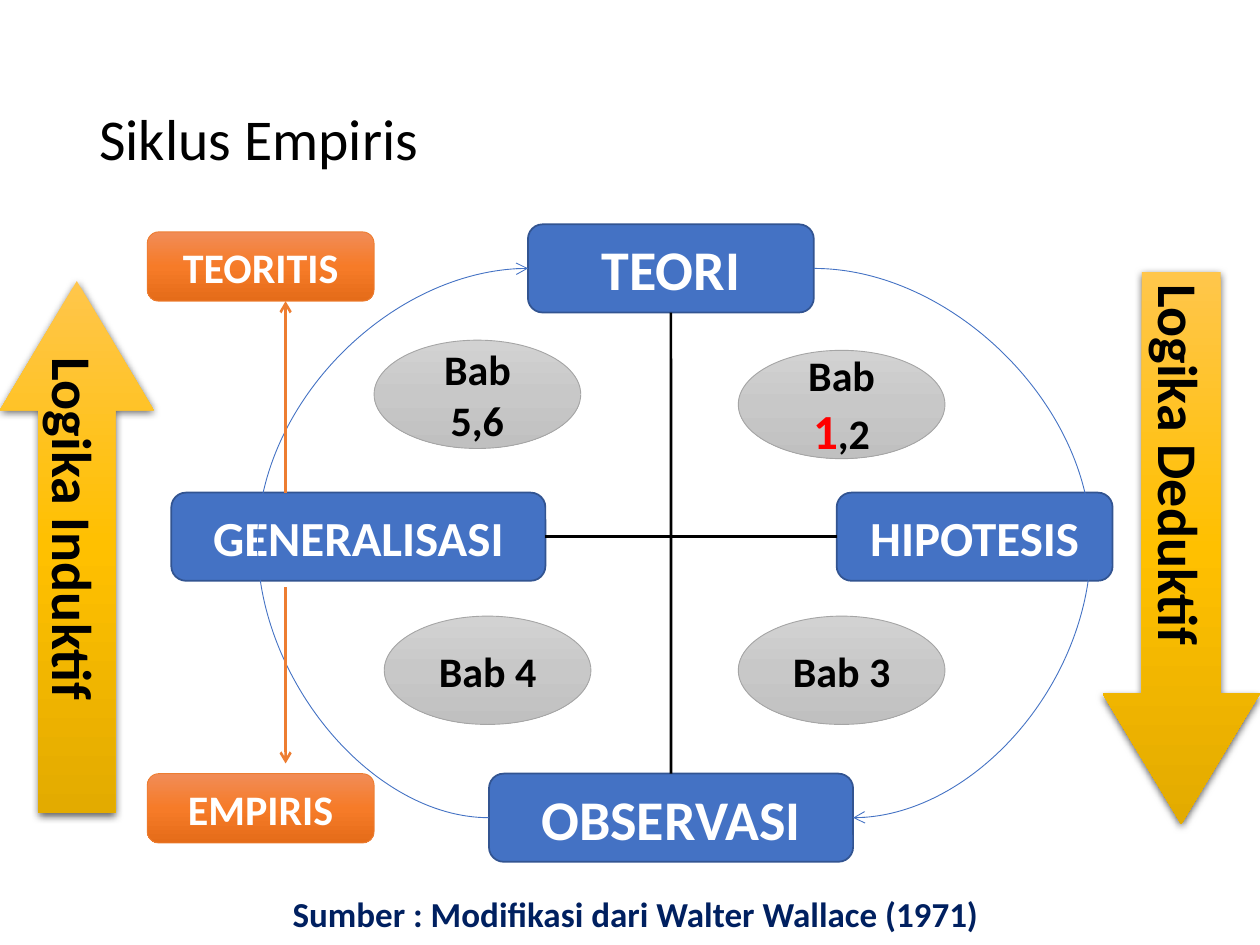
from copy import deepcopy

from lxml import etree
from pptx import Presentation
from pptx.dml.color import RGBColor
from pptx.enum.shapes import MSO_CONNECTOR as Connector, MSO_SHAPE as Shape
from pptx.enum.text import MSO_ANCHOR as Anchor, PP_ALIGN as Align
from pptx.oxml.ns import qn
from pptx.util import Pt

COLORS = {
    "black": "000000", "white": "FFFFFF", "red": "FF0000", "navy": "002060",
    "blue": "4472C4", "blue_edge": "325491", "orange": "ED7D31", "gray": "A5A5A5",
}
GRADIENTS = {
    "orange": ("F18C57", "F67B28", "E56C19"),
    "gold": ("FFC64B", "FFC000", "E3AB00"),
    "gray": ("D2D2D2", "C8C8C8", "C0C0C0"),
}


def rgb(name):
    return RGBColor.from_string(COLORS[name])


class SlideBuilder:
    font_name = "Calibri"

    def __init__(self, slide):
        self.slide = slide

    def add_runs(self, frame, runs, align=Align.CENTER, anchor=Anchor.MIDDLE, bold=True):
        """Fill the first paragraph; each run is (text, size, color)."""
        frame.word_wrap = True
        frame.vertical_anchor = anchor
        paragraph = frame.paragraphs[0]
        paragraph.alignment = align
        for text, size, color in runs:
            run = paragraph.add_run()
            run.text = text
            run.font.name = self.font_name
            run.font.size = Pt(size)
            run.font.bold = bold
            run.font.color.rgb = rgb(color)
        return paragraph

    def title(self, text, left, top, width, height):
        title = self.slide.shapes.title
        title.left, title.top = Pt(left), Pt(top)
        title.width, title.height = Pt(width), Pt(height)
        paragraph = self.add_runs(title.text_frame, [(text, 33, "black")], Align.LEFT, bold=False)
        paragraph.line_spacing = 0.9

    def text(self, runs, left, top, width, height):
        box = self.slide.shapes.add_textbox(Pt(left), Pt(top), Pt(width), Pt(height))
        self.add_runs(box.text_frame, runs, anchor=Anchor.TOP)

    def shape(self, kind, left, top, width, height):
        shape = self.slide.shapes.add_shape(kind, Pt(left), Pt(top), Pt(width), Pt(height))
        shape.shadow.inherit = False
        return shape

    def outline(self, line, color, width):
        line.color.rgb = rgb(color)
        line.width = Pt(width)

    def gradient(self, shape, name):
        """Vertical gradient with three evenly spaced stops."""
        shape.fill.gradient()
        shape.fill.gradient_angle = 270
        stop_list = shape._element.spPr.find(qn("a:gradFill")).find(qn("a:gsLst"))
        stop_list.append(deepcopy(stop_list[0]))
        for index, (stop, color) in enumerate(zip(shape.fill.gradient_stops, GRADIENTS[name])):
            stop.position = index / 2
            stop.color.rgb = RGBColor.from_string(color)

    def stage(self, text, size, left, top, width):
        shape = self.shape(Shape.ROUNDED_RECTANGLE, left, top, width, 50.4)
        shape.fill.solid()
        shape.fill.fore_color.rgb = rgb("blue")
        self.outline(shape.line, "blue_edge", 1)
        self.add_runs(shape.text_frame, [(text, size, "white")])
        return shape

    def level(self, text, top):
        shape = self.shape(Shape.ROUNDED_RECTANGLE, 84.2, top, 129.6, 39.6)
        self.gradient(shape, "orange")
        self.outline(shape.line, "orange", 0.5)
        self.add_runs(shape.text_frame, [(text, 24, "white")])

    def chapter(self, runs, left, top):
        shape = self.shape(Shape.OVAL, left, top, 118.1, 61.9)
        self.gradient(shape, "gray")
        self.outline(shape.line, "gray", 0.5)
        self.add_runs(shape.text_frame, runs)

    def logic_arrow(self, kind, text, left, top, width, height, head):
        shape = self.shape(kind, left, top, width, height)
        shape.adjustments[0], shape.adjustments[1] = 0.5, head
        self.gradient(shape, "gold")
        shape.line.fill.background()
        # Soft shadow below the arrow
        effects = shape._element.spPr.find(qn("a:effectLst"))
        shadow = etree.SubElement(effects, qn("a:outerShdw"), blurRad=str(Pt(4.5)),
                                  dist=str(Pt(1.5)), dir="5400000", rotWithShape="0")
        color = etree.SubElement(shadow, qn("a:srgbClr"), val=COLORS["black"])
        etree.SubElement(color, qn("a:alpha"), val="63000")
        # Vertical text
        paragraph = self.add_runs(shape.text_frame, [(text, 32, "black")], anchor=Anchor.TOP)
        paragraph.space_after = Pt(10)
        shape._element.txBody.find(qn("a:bodyPr")).set("vert", "eaVert")

    def connector(self, kind, color, width, points=(0, 0, 0, 0), arrow=False):
        connector = self.slide.shapes.add_connector(kind, *(Pt(value) for value in points))
        self.outline(connector.line, color, width)
        properties = connector._element.spPr
        if arrow:
            etree.SubElement(properties.find(qn("a:ln")), qn("a:tailEnd"), type="arrow")
        etree.SubElement(properties, qn("a:effectLst"))
        return connector

    def join(self, start, start_side, end, end_side):
        connector = self.connector(Connector.STRAIGHT, "black", 1.5)
        connector.begin_connect(start, start_side)
        connector.end_connect(end, end_side)

    def arc(self, start, end, side, bend):
        connector = self.connector(Connector.CURVE, "blue", 0.5, arrow=True)
        connector.begin_connect(start, side)
        connector.end_connect(end, side)
        guides = connector._element.spPr.find(qn("a:prstGeom")).find(qn("a:avLst"))
        etree.SubElement(guides, qn("a:gd"), name="adj1", fmla=f"val {round(bend * 100000)}")


def main():
    presentation = Presentation()
    presentation.slide_width, presentation.slide_height = Pt(720), Pt(540)
    builder = SlideBuilder(presentation.slides.add_slide(presentation.slide_layouts[5]))
    builder.title("Siklus Empiris", 49.5, 28.8, 621, 104.4)

    # Stages of the cycle
    theory = builder.stage("TEORI", 32, 301.7, 128.2, 163.4)
    generalisation = builder.stage("GENERALISASI", 28, 97.9, 281.5, 213.8)
    builder.level("TEORITIS", 132.5)
    observation = builder.stage("OBSERVASI", 32, 279.4, 442.1, 208.1)
    hypothesis = builder.stage("HIPOTESIS", 28, 478.1, 281.5, 157.7)

    # Cross in the middle
    builder.join(generalisation, 3, hypothesis, 1)
    builder.join(theory, 2, observation, 0)

    # Deductive and inductive logic
    builder.logic_arrow(Shape.DOWN_ARROW, "Logika Deduktif", 630, 155.5, 90, 315.4, 0.83)
    builder.logic_arrow(Shape.UP_ARROW, "Logika Induktif", 0, 160.6, 87.8, 303.8, 0.84)

    # Outer arcs
    builder.arc(theory, observation, 3, 7.07)
    builder.arc(observation, theory, 1, -5.93)

    # Theoretical and empirical levels
    builder.level("EMPIRIS", 442.1)
    for start, end in ((281.5, 172.1), (335.5, 436.3)):
        builder.connector(Connector.STRAIGHT, "orange", 1.5, (163.2, start, 163.2, end), arrow=True)

    # Chapters
    builder.chapter([("Bab ", 24, "black"), ("1", 28, "red"), (",2", 24, "black")], 421.9, 200.2)
    for text, left, top in (("Bab 4", 219.6, 352.1), ("Bab 3", 421.9, 352.1),
                            ("Bab 5,6", 213.8, 194.4)):
        builder.chapter([(text, 24, "black")], left, top)

    # Source line
    builder.text([("Sumber : Modifikasi dari Walter Wallace (1971)", 20, "navy")],
                 101.5, 506.2, 523.4, 31.7)
    presentation.save("out.pptx")


if __name__ == "__main__":
    main()
